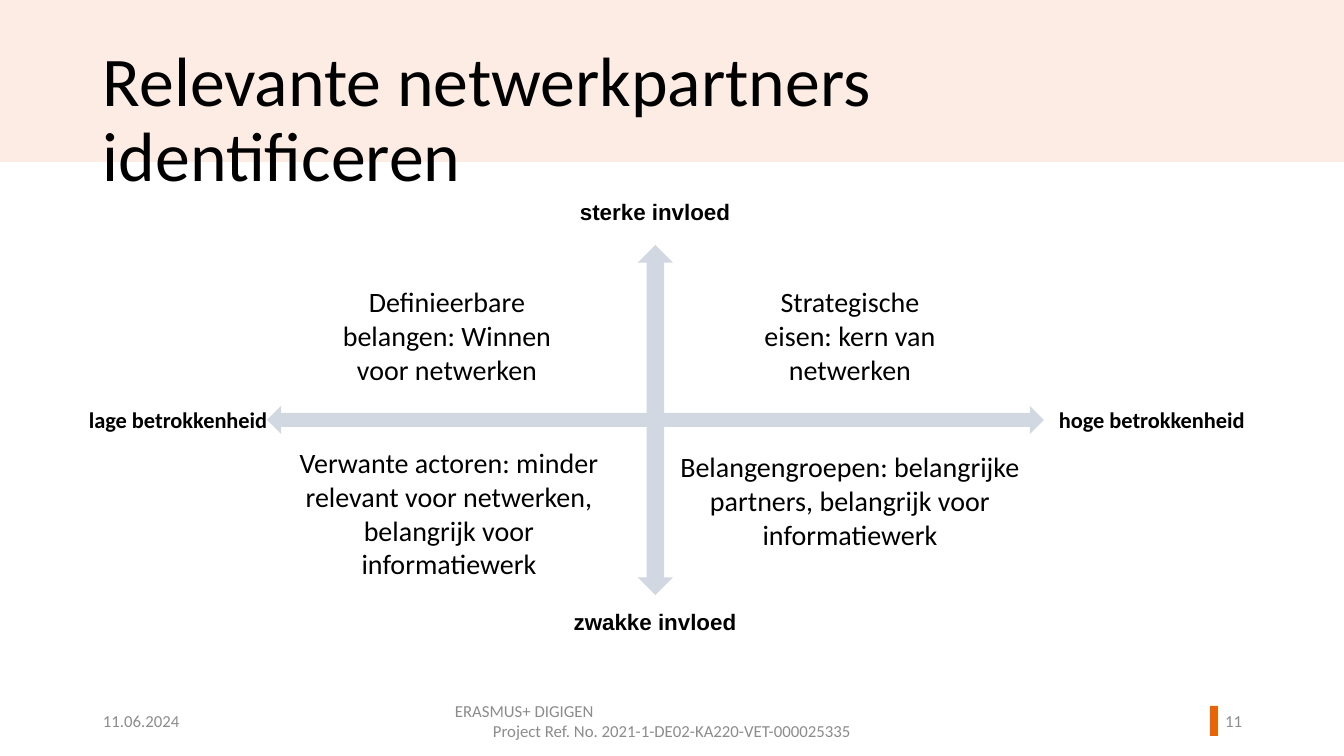
from pptx import Presentation
from pptx.dml.color import RGBColor
from pptx.enum.shapes import MSO_SHAPE as SHAPE
from pptx.enum.text import MSO_ANCHOR as ANCHOR, PP_ALIGN as ALIGN
from pptx.util import Pt

PX = 914400 / 100.8
COLORS = {
    "band": "FDECE3",
    "accent": "E86507",
    "axis": "D1D8E1",
    "ink": "000000",
    "footer": "8C8C8C",
}

deck = Presentation()
deck.slide_width = round(1344 * PX)
deck.slide_height = round(756 * PX)
slide = deck.slides.add_slide(deck.slide_layouts[6])


def add_block(kind, box, color):
    block = slide.shapes.add_shape(kind, *[round(n * PX) for n in box])
    block.shadow.inherit = False
    block.fill.solid()
    block.fill.fore_color.rgb = RGBColor.from_string(COLORS[color])
    block.line.fill.background()


def add_text(box, lines, size, align=ALIGN.LEFT, anchor=ANCHOR.TOP,
             color="ink", font="Calibri", bold=False, wrap=True):
    frame = slide.shapes.add_textbox(*[round(n * PX) for n in box]).text_frame
    frame.word_wrap = wrap
    frame.vertical_anchor = anchor
    for i, line in enumerate(lines):
        paragraph = frame.paragraphs[0] if i == 0 else frame.add_paragraph()
        paragraph.alignment = align
        run = paragraph.add_run()
        run.text = line
        run.font.name = font
        run.font.size = Pt(size)
        run.font.bold = bold
        run.font.color.rgb = RGBColor.from_string(COLORS[color])
    return frame


add_block(SHAPE.RECTANGLE, (0, 0, 1344, 162), "band")
add_block(SHAPE.RECTANGLE, (1210, 706, 8, 30), "accent")
add_block(SHAPE.UP_DOWN_ARROW, (638, 245, 35, 350), "axis")
add_block(SHAPE.LEFT_RIGHT_ARROW, (267, 406, 777, 28), "axis")

title = add_text((93, 41, 1093, 86), ["Relevante netwerkpartners identificeren"], 49.8)
title.paragraphs[0].line_spacing = 0.9

for top, influence in ((185, "sterke invloed"), (595, "zwakke invloed")):
    add_text((546, top, 218, 54), [influence], 16, ALIGN.CENTER, ANCHOR.MIDDLE,
             font="Arial", bold=True)

for left, width, involvement in (
    (79, 200, "lage betrokkenheid"),
    (1049, 209, "hoge betrokkenheid"),
):
    add_text((left, 401, width, 37), [involvement], 16, bold=True, wrap=False)

quadrants = [
    ((314, 280, 266, 112), "Definieerbare belangen: Winnen voor netwerken"),
    ((744, 280, 212, 112), "Strategische eisen: kern van netwerken"),
    ((277, 441, 344, 146),
     "Verwante actoren: minder relevant voor netwerken, belangrijk voor informatiewerk"),
    ((666, 445, 368, 112),
     "Belangengroepen: belangrijke partners, belangrijk voor informatiewerk"),
]
for box, partners in quadrants:
    add_text(box, [partners], 20, ALIGN.CENTER)

footer_style = {"size": 12, "anchor": ANCHOR.MIDDLE, "color": "footer"}
add_text((93, 701, 302, 40), ["11.06.2024"], **footer_style)
project = add_text(
    (445, 701, 454, 40),
    ["ERASMUS+ DIGIGEN", "Project Ref. No. 2021-1-DE02-KA220-VET-000025335"],
    align=ALIGN.CENTER, **footer_style)
project.paragraphs[0].alignment = ALIGN.LEFT
add_text((1186, 701, 66, 40), ["11"], align=ALIGN.RIGHT, **footer_style)

deck.save("out.pptx")
